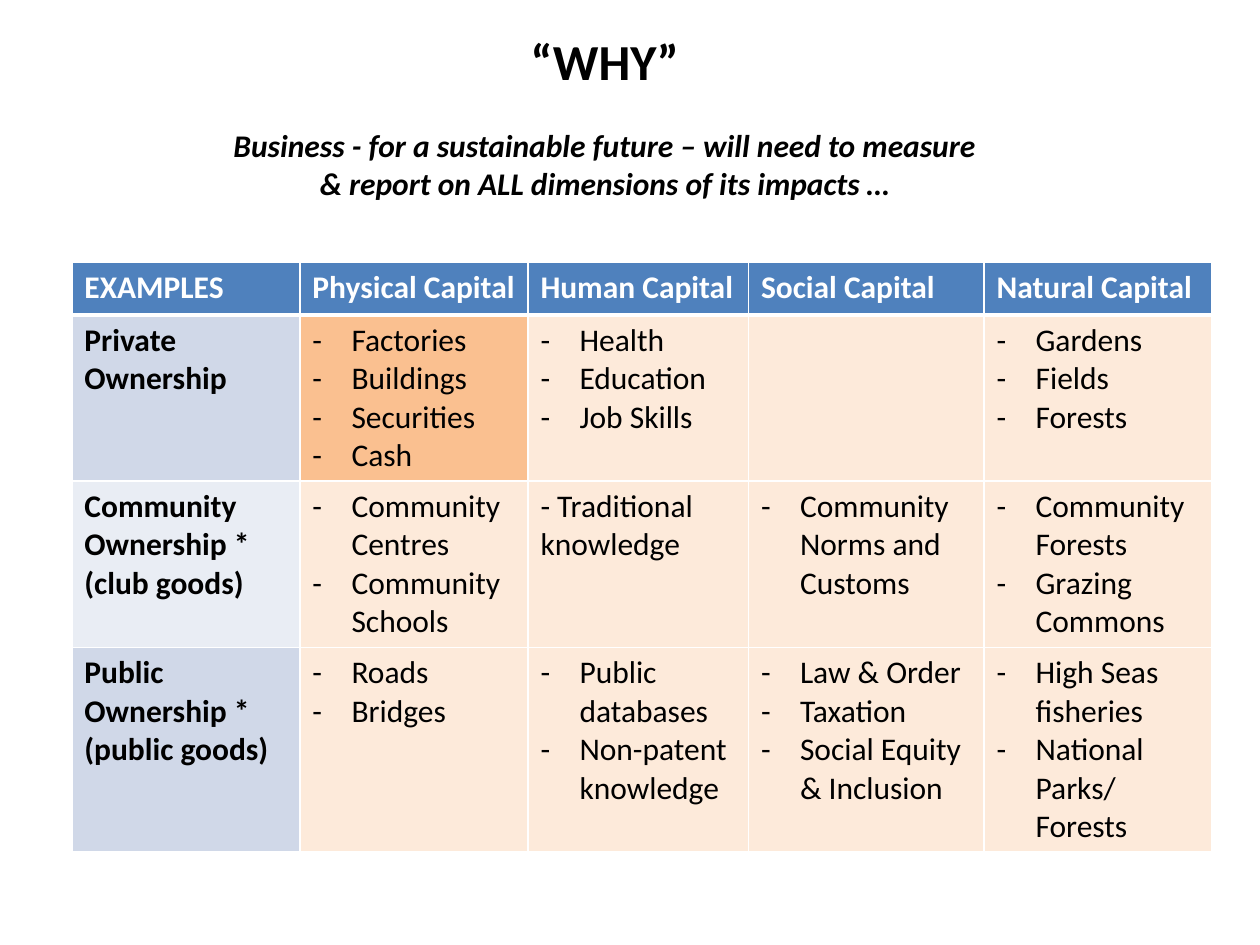
from lxml.etree import SubElement
from pptx import Presentation
from pptx.dml.color import RGBColor
from pptx.enum.text import MSO_ANCHOR, PP_ALIGN
from pptx.oxml.ns import qn
from pptx.util import Inches, Pt

FONT = "Calibri"
BLACK, WHITE, BLUE = "000000", "FFFFFF", "4F81BD"
BAND_DARK, BAND_LIGHT = "D0D8E8", "E9EDF4"
ORANGE, PEACH = "FAC090", "FDEADA"

TITLE = "“WHY”"
SUBTITLE = ("Business - for a sustainable future – will need to measure "
            "& report on ALL dimensions of its impacts …")

HEADINGS = ["EXAMPLES", "Physical Capital", "Human Capital",
            "Social Capital", "Natural Capital"]
# Each ownership row: label lines, label fill, one list of examples per capital
OWNERSHIP = [
    (["Private Ownership"], BAND_DARK, [
        ["Factories", "Buildings", "Securities", "Cash"],
        ["Health", "Education", "Job Skills"],
        [],
        ["Gardens", "Fields", "Forests"]]),
    (["Community", "Ownership *", "(club goods)"], BAND_LIGHT, [
        ["Community Centres", "Community Schools"],
        ["- Traditional knowledge"],
        ["Community Norms and Customs"],
        ["Community Forests", "Grazing Commons"]]),
    (["Public Ownership * (public goods)"], BAND_DARK, [
        ["Roads", "Bridges"],
        ["Public databases", "Non-patent knowledge"],
        ["Law & Order", "Taxation", "Social Equity & Inclusion"],
        ["High Seas fisheries", "National Parks/ Forests"]]),
]
HIGHLIGHT = (1, 1)  # privately owned physical capital
COLUMN_WIDTHS = [1.81, 1.81, 1.75, 1.87, 1.81]
ROW_HEIGHTS = [0.42, 1.32, 1.32, 1.62]


def rgb(color):
    return RGBColor.from_string(color)


def add_run(paragraph, text, size=18, color=BLACK, bold=False, italic=False):
    run = paragraph.add_run()
    run.text = text
    font = run.font
    font.name, font.size, font.bold, font.italic = FONT, Pt(size), bold, italic
    font.color.rgb = rgb(color)


def add_dash(paragraph):
    """Give the paragraph a hanging dash bullet."""
    properties = paragraph._p.get_or_add_pPr()
    properties.set("marL", str(Inches(0.31)))
    properties.set("indent", str(-Inches(0.31)))
    SubElement(properties, qn("a:buFont"), typeface=FONT)
    SubElement(properties, qn("a:buChar"), char="-")


def add_borders(cell, bottom):
    properties = cell._tc.get_or_add_tcPr()
    for side, width in (("L", 1), ("R", 1), ("T", 1), ("B", bottom)):
        line = SubElement(properties, qn(f"a:ln{side}"), w=str(Pt(width)))
        fill = SubElement(line, qn("a:solidFill"))
        SubElement(fill, qn("a:srgbClr"), val=WHITE)


def fill_cell(cell, lines, fill, color=BLACK, bold=False, dashes=False, bottom=1):
    add_borders(cell, bottom)
    cell.fill.solid()
    cell.fill.fore_color.rgb = rgb(fill)
    frame = cell.text_frame
    for i, line in enumerate(lines):
        paragraph = frame.add_paragraph() if i else frame.paragraphs[0]
        if dashes and not line.startswith("-"):
            add_dash(paragraph)
        add_run(paragraph, line, color=color, bold=bold)


def add_heading(slide):
    box = slide.shapes.add_textbox(Inches(1.69), Inches(0.52), Inches(6.22), Inches(0.8))
    frame = box.text_frame
    frame.word_wrap = True
    frame.vertical_anchor = MSO_ANCHOR.MIDDLE
    title, subtitle = frame.paragraphs[0], frame.add_paragraph()
    title.alignment = subtitle.alignment = PP_ALIGN.CENTER
    subtitle.space_before = Pt(20)
    add_run(title, TITLE, size=28.8, bold=True)
    add_run(subtitle, SUBTITLE, bold=True, italic=True)


def add_capital_table(slide):
    table = slide.shapes.add_table(
        len(ROW_HEIGHTS), len(COLUMN_WIDTHS), Inches(0.57), Inches(2.08),
        Inches(sum(COLUMN_WIDTHS)), Inches(sum(ROW_HEIGHTS))).table
    for column, width in zip(table.columns, COLUMN_WIDTHS):
        column.width = Inches(width)
    for row, height in zip(table.rows, ROW_HEIGHTS):
        row.height = Inches(height)

    for c, heading in enumerate(HEADINGS):
        fill_cell(table.cell(0, c), [heading], BLUE, color=WHITE, bold=True, bottom=3)
    for r, (label, label_fill, capitals) in enumerate(OWNERSHIP, 1):
        fill_cell(table.cell(r, 0), label, label_fill, bold=True)
        for c, examples in enumerate(capitals, 1):
            fill = ORANGE if (r, c) == HIGHLIGHT else PEACH
            fill_cell(table.cell(r, c), examples, fill, dashes=True)


def main():
    deck = Presentation()
    deck.slide_width, deck.slide_height = Inches(10), Inches(7.5)
    slide = deck.slides.add_slide(deck.slide_layouts[6])
    add_heading(slide)
    add_capital_table(slide)
    deck.save("out.pptx")


if __name__ == "__main__":
    main()
